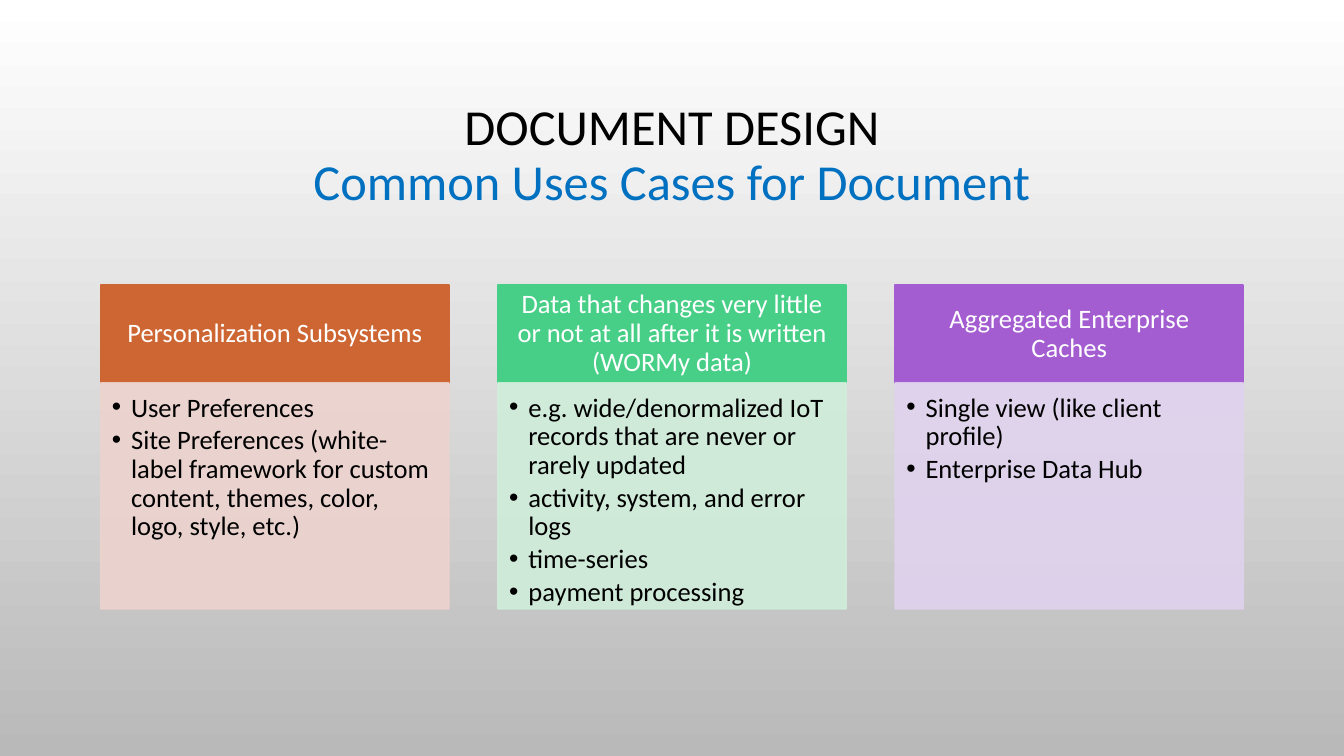
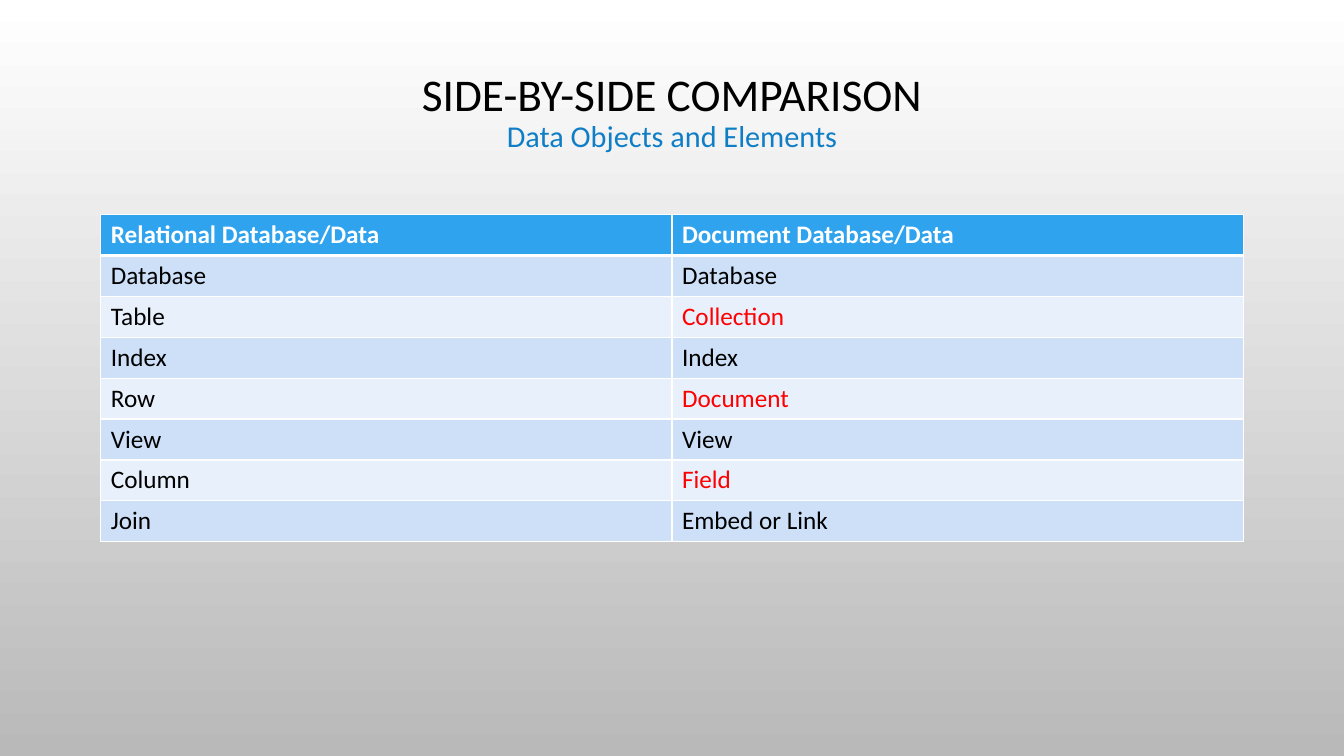
from copy import deepcopy

from lxml import etree
from pptx import Presentation
from pptx.dml.color import RGBColor
from pptx.enum import shapes, text
from pptx.oxml import ns
from pptx.util import Inches, Pt

COLORS = {
    "page_top": "FFFFFF", "page_bottom": "B9B9B9", "ink": "000000", "white": "FFFFFF",
    "document_subtitle": "0070C0", "comparison_subtitle": "107EC6", "changed": "FF0000",
    "table_head": "2FA3EE", "band_dark": "CDE0F8", "band_light": "E8F0FC",
    "orange": "CE6633", "orange_tint": "EDD3CE",
    "green": "48CF87", "green_tint": "D0EDDA",
    "purple": "A35DD1", "purple_tint": "E0D2EE",
}
FONT = "Calibri"
LEFT, WIDTH = 1, 11.33

USE_CASES = [
    ("orange", "Personalization Subsystems", [
        "User Preferences",
        "Site Preferences (white-label framework for custom content, themes, color, logo, style, etc.)"]),
    ("green", "Data that changes very little or not at all after it is written (WORMy data)", [
        "e.g. wide/denormalized IoT records that are never or rarely updated",
        "activity, system, and error logs", "time-series", "payment processing"]),
    ("purple", "Aggregated Enterprise Caches", [
        "Single view (like client profile)", "Enterprise Data Hub"]),
]
COMPARISON = [
    ("Relational Database/Data", "Document Database/Data"),
    ("Database", "Database"), ("Table", "Collection"), ("Index", "Index"),
    ("Row", "Document"), ("View", "View"), ("Column", "Field"), ("Join", "Embed or Link"),
]
CHANGED_TERMS = {"Collection", "Document", "Field"}


def rgb(name):
    """Return the named colour."""
    return RGBColor.from_string(COLORS[name])


def add_xml(parent, tag, **attributes):
    """Append a DrawingML element to a parent."""
    return etree.SubElement(parent, ns.qn(tag), **attributes)


def write(paragraph, words, size=18, color="ink", bold=False, align=None,
          spacing=None, after=None, bullet=False):
    """Add one formatted run to a paragraph and return it."""
    if bullet:
        properties = paragraph._p.get_or_add_pPr()
        properties.set("marL", str(Inches(0.19)))
        properties.set("indent", str(-Inches(0.19)))
        add_xml(properties, "a:buFont", typeface="Arial")
        add_xml(properties, "a:buChar", char="•")
    if align is not None:
        paragraph.alignment = align
    if spacing is not None:
        paragraph.line_spacing = spacing
    if after is not None:
        paragraph.space_after = Pt(after)
    run = paragraph.add_run()
    run.text = words
    run.font.name, run.font.size, run.font.bold = FONT, Pt(size), bold
    run.font.color.rgb = rgb(color)
    return run


def set_margins(frame, left, top, right, bottom):
    """Set the four insets of a text frame."""
    frame.margin_left, frame.margin_top = Inches(left), Inches(top)
    frame.margin_right, frame.margin_bottom = Inches(right), Inches(bottom)


def style_background(master):
    """Give every slide the vertical grey gradient."""
    fill = master.background.fill
    fill.gradient()
    fill.gradient_angle = 270
    for stop, position, color in zip(fill.gradient_stops, (0, 1), ("page_top", "page_bottom")):
        stop.position = position
        stop.color.rgb = rgb(color)


def add_titled_slide(prs, heading, subtitle, height, sizes, subtitle_color):
    """Add a slide with a two-line centred title."""
    slide = prs.slides.add_slide(prs.slide_layouts[5])
    title = slide.shapes.title
    title.left, title.top = Inches(LEFT), Inches(0.68)
    title.width, title.height = Inches(WIDTH), Inches(height)
    frame = title.text_frame
    frame.word_wrap = True
    frame.auto_size = text.MSO_AUTO_SIZE.NONE
    frame.vertical_anchor = text.MSO_ANCHOR.MIDDLE
    paragraph = frame.paragraphs[0]
    heading_run = write(paragraph, heading, size=sizes[0], align=text.PP_ALIGN.CENTER, spacing=0.9)
    paragraph.add_line_break()
    paragraph._p[-1].append(deepcopy(heading_run._r.rPr))
    write(paragraph, subtitle, size=sizes[1], color=subtitle_color)
    return slide


def add_panel(slide, left, top, width, height, color, alpha=None):
    """Add a filled rectangle and return its text frame."""
    panel = slide.shapes.add_shape(shapes.MSO_SHAPE.RECTANGLE, Inches(left), Inches(top),
                                   Inches(width), Inches(height))
    panel.shadow.inherit = False
    panel.fill.solid()
    panel.fill.fore_color.rgb = rgb(color)
    panel.line.color.rgb = rgb(color)
    panel.line.width = Pt(1.25)
    if alpha is not None:
        for tint in panel._element.spPr.iter(ns.qn("a:srgbClr")):
            add_xml(tint, "a:alpha", val=str(alpha * 1000))
    panel.text_frame.word_wrap = True
    return panel.text_frame


def add_use_case(slide, left, top, width, color, heading, examples):
    """Add one headed card with its bulleted examples."""
    head_height, body_height = 0.97, 2.24
    head = add_panel(slide, left, top, width, head_height, color)
    set_margins(head, 0.15, 0.08, 0.15, 0.08)
    head.vertical_anchor = text.MSO_ANCHOR.MIDDLE
    write(head.paragraphs[0], heading, size=19, color="white",
          align=text.PP_ALIGN.CENTER, spacing=0.9)

    body = add_panel(slide, left, top + head_height, width, body_height, color + "_tint", alpha=90)
    set_margins(body, 0.11, 0.11, 0.15, 0.17)
    body.vertical_anchor = text.MSO_ANCHOR.TOP
    for index, example in enumerate(examples):
        paragraph = body.add_paragraph() if index else body.paragraphs[0]
        write(paragraph, example, size=19, align=text.PP_ALIGN.LEFT,
              spacing=0.9, after=2.85, bullet=True)


def set_borders(cell, row):
    """Draw white cell borders, thicker under the header row."""
    properties = cell._tc.get_or_add_tcPr()
    for position, side in enumerate("LRTB"):
        thick = (row, side) in ((0, "B"), (1, "T"))
        border = add_xml(properties, f"a:ln{side}", w=str(Pt(3 if thick else 1)))
        add_xml(add_xml(border, "a:solidFill"), "a:srgbClr", val=COLORS["white"])
        properties.insert(position, border)


def add_comparison(slide, left, top, width, height):
    """Add the banded table of matching terms."""
    table = slide.shapes.add_table(len(COMPARISON), 2, Inches(left), Inches(top),
                                   Inches(width), Inches(height)).table
    for row, terms in enumerate(COMPARISON):
        band = "band_dark" if row % 2 else "band_light"
        for column, term in enumerate(terms):
            cell = table.cell(row, column)
            cell.fill.solid()
            cell.fill.fore_color.rgb = rgb(band if row else "table_head")
            set_borders(cell, row)
            changed = column == 1 and term in CHANGED_TERMS
            color = "white" if row == 0 else "changed" if changed else "ink"
            write(cell.text_frame.paragraphs[0], term, color=color, bold=row == 0)


def build_use_cases(prs):
    """Build the slide of common document use cases."""
    slide = add_titled_slide(prs, "DOCUMENT DESIGN", "Common Uses Cases for Document",
                             1.75, (36, 36), "document_subtitle")
    card_width = 3.45
    pitch = (WIDTH - card_width) / (len(USE_CASES) - 1)
    for index, use_case in enumerate(USE_CASES):
        add_use_case(slide, LEFT + index * pitch, 2.83, card_width, *use_case)


def build_comparison(prs):
    """Build the slide comparing relational and document terms."""
    slide = add_titled_slide(prs, "SIDE-BY-SIDE COMPARISON", "Data Objects and Elements",
                             0.88, (32.4, 21.6), "comparison_subtitle")
    add_comparison(slide, LEFT, 2.13, WIDTH, 3.24)


def main():
    """Build and save the presentation."""
    prs = Presentation()
    prs.slide_width, prs.slide_height = Inches(13.33), Inches(7.5)
    style_background(prs.slide_master)
    build_use_cases(prs)
    build_comparison(prs)
    prs.save("out.pptx")


if __name__ == "__main__":
    main()
